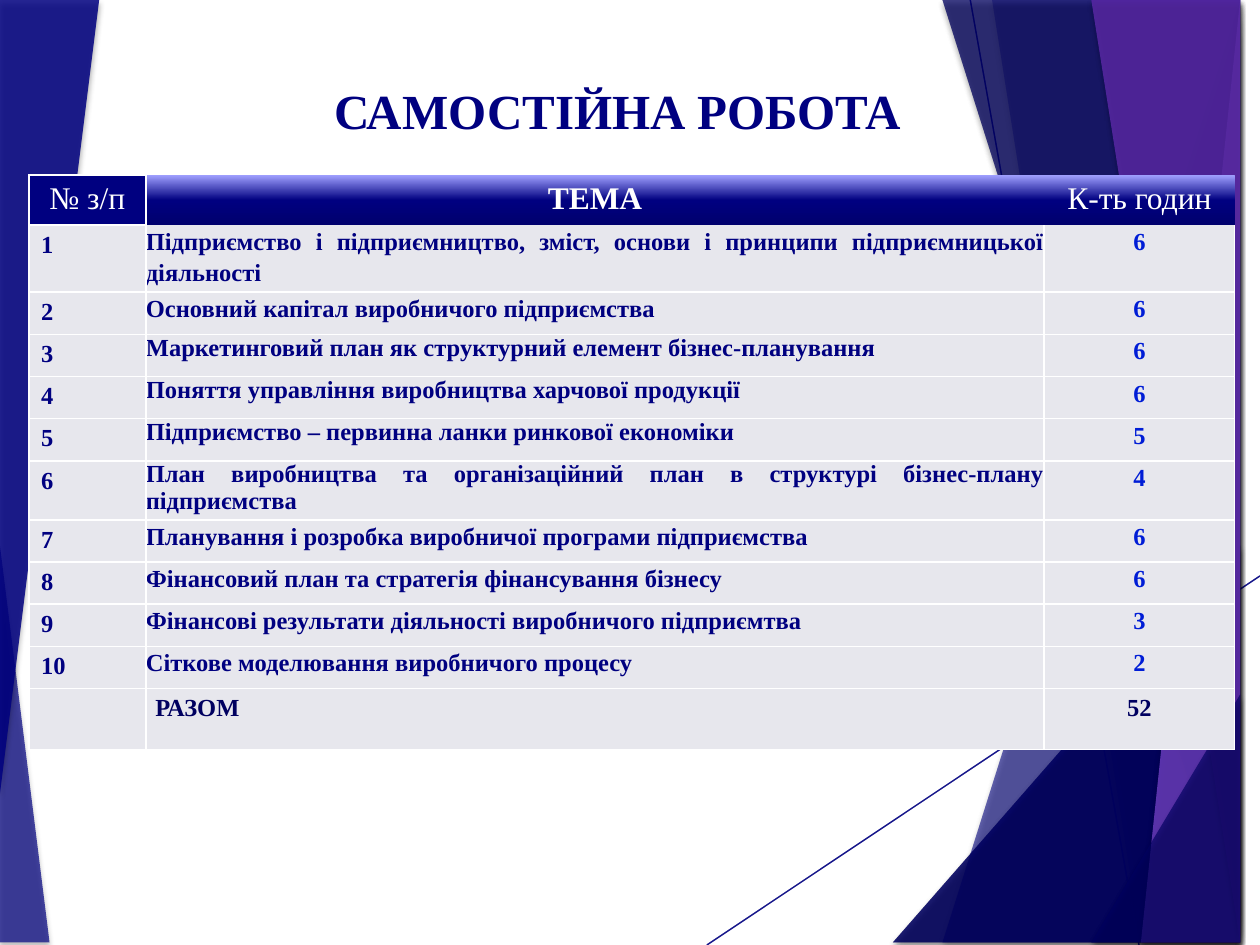
from dataclasses import dataclass

from lxml.etree import SubElement
from pptx import Presentation
from pptx.dml.color import RGBColor
from pptx.enum.shapes import MSO_CONNECTOR
from pptx.enum.text import MSO_ANCHOR, PP_ALIGN as Align
from pptx.oxml import parse_xml
from pptx.oxml.ns import nsdecls, qn
from pptx.util import Cm, Pt

FONT = "Times New Roman"
WHITE = RGBColor(0xFF, 0xFF, 0xFF)
NAVY = RGBColor(0x00, 0x00, 0x80)
DEEP_NAVY = RGBColor(0x00, 0x00, 0x60)
HEADER_LIGHT = RGBColor(0xA0, 0xA0, 0xFF)
HEADER_DARK = RGBColor(0x00, 0x00, 0x6D)
LILAC = RGBColor(0x7B, 0x46, 0xD0)
VIOLET = RGBColor(0x5A, 0x2A, 0xA6)
HOURS_BLUE = RGBColor(0x00, 0x1D, 0xD6)
CELL_GREY = RGBColor(0xE7, 0xE7, 0xED)
NO_STYLE = "{2D5ABB26-0587-4C30-8999-92F81FD0307C}"
LOOSE = 1.14

TOPICS = [
    ("Підприємство і підприємництво, зміст, основи і принципи підприємницької діяльності", 6, Align.JUSTIFY, LOOSE, 1.35),
    ("Основний капітал виробничого підприємства", 6, Align.JUSTIFY, LOOSE, 0.85),
    ("Маркетинговий план як структурний елемент бізнес-планування", 6, Align.JUSTIFY, 1.0, 0.85),
    ("Поняття управління виробництва харчової продукції", 6, Align.JUSTIFY, 1.0, 0.85),
    ("Підприємство – первинна ланки ринкової економіки", 5, Align.JUSTIFY, 1.0, 0.85),
    ("План виробництва та організаційний план в структурі бізнес-плану підприємства", 4, Align.JUSTIFY, 1.0, 1.19),
    ("Планування і розробка виробничої програми підприємства", 6, Align.LEFT, LOOSE, 0.85),
    ("Фінансовий план та стратегія фінансування бізнесу", 6, Align.LEFT, LOOSE, 0.85),
    ("Фінансові результати діяльності виробничого підприємтва", 3, Align.LEFT, LOOSE, 0.85),
    ("Сіткове моделювання виробничого процесу", 2, Align.LEFT, LOOSE, 0.85),
]


@dataclass
class Box:
    """A region of the slide in centimetres."""
    left: float
    top: float
    width: float
    height: float


def set_opacity(fill_owner, percent):
    """Make every solid colour under the element partly transparent."""
    for color in fill_owner.iter(qn("a:srgbClr")):
        SubElement(color, qn("a:alpha"), val=str(percent * 1000))


def add_panel(slide, box, points, color, opacity):
    """Draw a translucent polygon with a soft shadow."""
    corners = [(box.left + x, box.top + y) for x, y in points]
    builder = slide.shapes.build_freeform(*corners[0], scale=Cm(1))
    builder.add_line_segments(corners[1:], close=True)
    panel = builder.convert_to_shape()
    panel.fill.solid()
    panel.fill.fore_color.rgb = color
    panel.line.fill.background()
    properties = panel._element.spPr
    set_opacity(properties, opacity)
    properties.append(parse_xml(
        f'<a:effectLst {nsdecls("a")}><a:outerShdw blurRad="{Pt(3)}" dist="{Pt(2)}" '
        'dir="5400000" rotWithShape="0"><a:srgbClr val="000000"><a:alpha val="35000"/>'
        '</a:srgbClr></a:outerShdw></a:effectLst>'))


def add_thin_line(slide, box, start, end):
    """Draw one of the fine diagonal lines."""
    line = slide.shapes.add_connector(
        MSO_CONNECTOR.STRAIGHT, Cm(box.left + start[0]), Cm(box.top + start[1]),
        Cm(box.left + end[0]), Cm(box.top + end[1]))
    line.line.color.rgb = NAVY
    line.line.width = Pt(0.75)
    properties = line._element.spPr
    set_opacity(properties, 70)
    SubElement(properties, qn("a:effectLst"))


def add_right_facets(slide, box):
    """Draw the lines and overlapping panels of the right side."""
    right, bottom = box.width, box.height

    def band(top_x, bottom_x):
        return [(top_x, 0), (bottom_x, bottom), (right, bottom), (right, 0)]

    def wedge(bottom_x, right_y):
        return [(bottom_x, bottom), (right, right_y), (right, bottom)]

    add_thin_line(slide, box, (14.25, bottom), (right, 11.61))
    add_thin_line(slide, box, (19.56, 0), (22.96, bottom))
    for points, color, opacity in [
        (band(24.77, 19.15), NAVY, 36),
        (band(20.02, 23.34), NAVY, 20),
        (wedge(18.44, 10.9), DEEP_NAVY, 66),
        (band(19.48, 24.61), DEEP_NAVY, 50),
        (band(24.92, 23.04), LILAC, 70),
        (band(22.48, 25.1), VIOLET, 82),
        (wedge(22.4, 13.59), DEEP_NAVY, 66),
    ]:
        add_panel(slide, box, points, color, opacity)


def add_backdrop(slide, box):
    """Draw the left wedges and two layers of the right facets."""
    add_panel(slide, box, [(0, 11.15), (1.24, box.height), (0, box.height)], NAVY, 70)
    for _ in range(2):
        add_right_facets(slide, box)
    add_panel(slide, box, [(0, 0), (2.36, 0), (0, 15.8)], NAVY, 85)


def add_run(paragraph, text, size, color, bold=True):
    """Append a formatted run."""
    run = paragraph.add_run()
    run.text = text
    run.font.name = FONT
    run.font.size = Pt(size)
    run.font.bold = bold
    run.font.color.rgb = color


def add_title(slide, box):
    """Place and format the slide title."""
    title = slide.shapes.title
    title.left, title.top = Cm(box.left), Cm(box.top)
    title.width, title.height = Cm(box.width), Cm(box.height)
    frame = title.text_frame
    frame.word_wrap = True
    frame.vertical_anchor = MSO_ANCHOR.MIDDLE
    paragraph = frame.paragraphs[0]
    paragraph.alignment = Align.CENTER
    add_run(paragraph, "САМОСТІЙНА РОБОТА", 28, NAVY)


def fill_cell(cell, text, size, color, bold=True, align=Align.LEFT, spacing=1.0, margins=(0.25, 0.13)):
    """Write a cell and give it the plain grey fill."""
    cell.margin_left = cell.margin_right = Cm(margins[0])
    cell.margin_top = cell.margin_bottom = Cm(margins[1])
    cell.fill.solid()
    cell.fill.fore_color.rgb = CELL_GREY
    paragraph = cell.text_frame.paragraphs[0]
    paragraph.alignment = align
    paragraph.line_spacing = spacing
    if text:
        add_run(paragraph, text, size, color, bold)


def set_borders(cell, sides):
    """Draw white borders on the given sides and none on the others."""
    properties = cell._tc.get_or_add_tcPr()
    for index, side in enumerate("LRTB"):
        paint = f'<a:solidFill><a:srgbClr val="{WHITE}"/></a:solidFill>' if side in sides else "<a:noFill/>"
        properties.insert(index, parse_xml(
            f'<a:ln{side} {nsdecls("a")} w="{Pt(0.96)}">{paint}</a:ln{side}>'))


def set_header_gradient(cell):
    """Replace the cell fill with the vertical header gradient."""
    properties = cell._tc.get_or_add_tcPr()
    properties.remove(properties.find(qn("a:solidFill")))
    stops = "".join(
        f'<a:gs pos="{position * 1000}"><a:srgbClr val="{color}"/></a:gs>'
        for position, color in [(0, HEADER_LIGHT), (50, NAVY), (100, HEADER_DARK)])
    properties.append(parse_xml(
        f'<a:gradFill {nsdecls("a")} rotWithShape="1"><a:gsLst>{stops}</a:gsLst>'
        '<a:lin ang="5400000" scaled="0"/></a:gradFill>'))


def add_topics_table(slide, box):
    """Build the table of topics and hours."""
    heights = [1.01, *(topic[-1] for topic in TOPICS), 1.23]
    frame = slide.shapes.add_table(
        len(heights), 3, Cm(box.left), Cm(box.top), Cm(box.width), Cm(box.height))
    table = frame.table
    frame._element.find(".//" + qn("a:tableStyleId")).text = NO_STYLE
    table.horz_banding = False
    for column, width in zip(table.columns, (2.36, 18.11, 3.84)):
        column.width = Cm(width)
    for row, height in zip(table.rows, heights):
        row.height = Cm(height)

    headers = [("№ з/п", False, "LRTB"), ("ТЕМА", True, "L"), ("К-ть годин", False, "")]
    for index, (text, bold, sides) in enumerate(headers):
        cell = table.cell(0, index)
        fill_cell(cell, text, 18, WHITE, bold, Align.CENTER)
        cell.fill.fore_color.rgb = NAVY
        if index:
            set_header_gradient(cell)
        set_borders(cell, sides)

    for number, (topic, hours, align, spacing, _) in enumerate(TOPICS, 1):
        fill_cell(table.cell(number, 0), str(number), 14, NAVY)
        fill_cell(table.cell(number, 1), topic, 14, NAVY, True, align, spacing, (0, 0))
        fill_cell(table.cell(number, 2), str(hours), 14, HOURS_BLUE, True, Align.CENTER, LOOSE, (0, 0))

    total = str(sum(topic[1] for topic in TOPICS) + 2)
    for index, (text, align) in enumerate([("", Align.LEFT), ("РАЗОМ", Align.LEFT), (total, Align.CENTER)]):
        fill_cell(table.cell(len(heights) - 1, index), text, 14, DEEP_NAVY, True, align, margins=(0.19, 0.13))
    for row in range(1, len(heights)):
        for column in range(3):
            set_borders(table.cell(row, column), "LRB" if row == 1 and column else "LRTB")


def main():
    """Build and save the presentation."""
    presentation = Presentation()
    presentation.slide_width, presentation.slide_height = Cm(25.4), Cm(19.05)
    slide = presentation.slides.add_slide(presentation.slide_layouts[5])
    add_backdrop(slide, Box(0, 0, 25.4, 19.05))
    add_title(slide, Box(6.1, 1.5, 12.7, 1.45))
    add_topics_table(slide, Box(0.58, 3.53, 24.31, 11.55))
    presentation.save("out.pptx")


if __name__ == "__main__":
    main()
